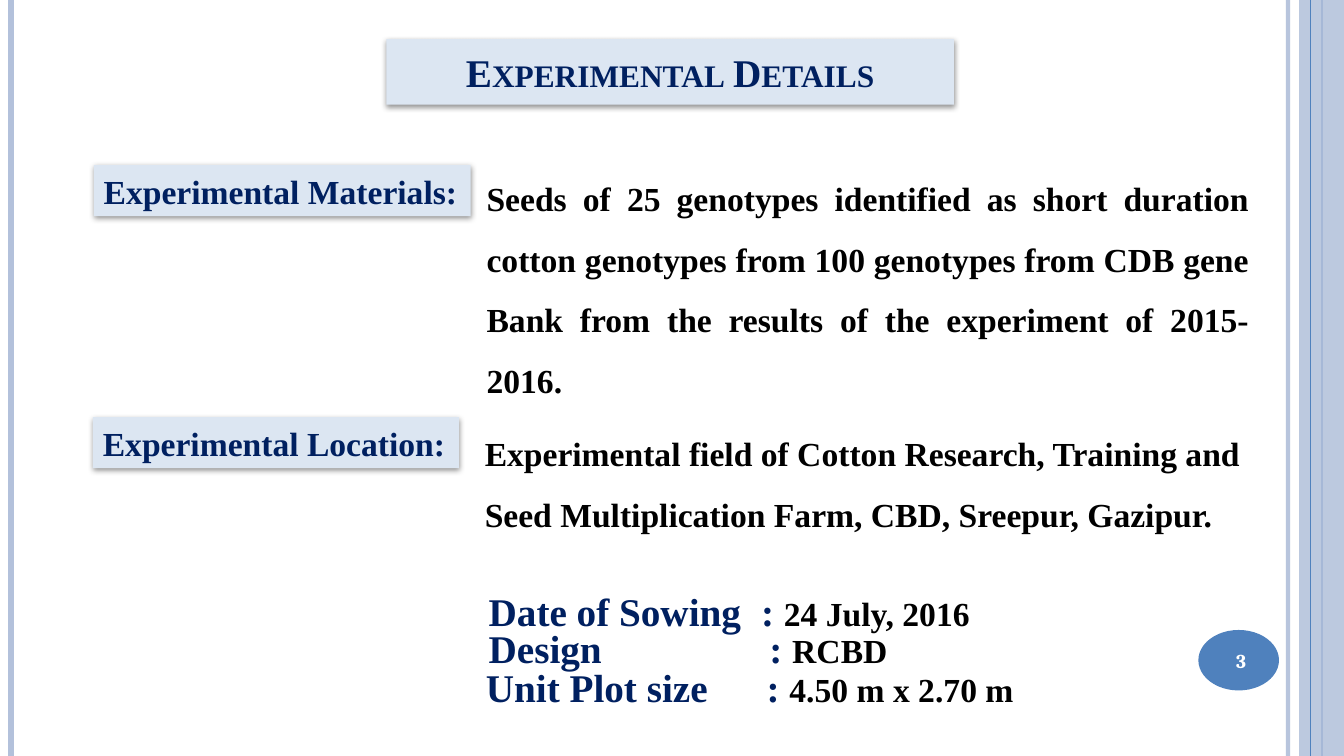
import lxml.etree
import pptx
import pptx.dml.color
import pptx.enum.shapes
import pptx.enum.text
import pptx.oxml.ns
import pptx.util

Pt = pptx.util.Pt
RGBColor = pptx.dml.color.RGBColor
Shape = pptx.enum.shapes.MSO_SHAPE
Anchor = pptx.enum.text.MSO_ANCHOR
Align = pptx.enum.text.PP_ALIGN
qn = pptx.oxml.ns.qn

NAVY = RGBColor(0x00, 0x20, 0x60)
BLACK = RGBColor(0x00, 0x00, 0x00)
WHITE = RGBColor(0xFF, 0xFF, 0xFF)
BLUE = RGBColor(0x4F, 0x81, 0xBD)
MIST = RGBColor(0xB3, 0xC1, 0xDB)
PALE = RGBColor(0xDC, 0xE6, 0xF2)

WIDTH, HEIGHT = 960, 540


def set_alpha(element, percent):
    """Make the solid colour inside a fill or line partly transparent."""
    color = next(element.iter(qn("a:srgbClr")))
    lxml.etree.SubElement(color, qn("a:alpha"), val=str(percent * 1000))


class Page:
    """One slide with its serif style."""

    serif = "Times New Roman"
    heading_size = 28
    body_size = 24

    def __init__(self, deck):
        self.shapes = deck.slides.add_slide(deck.slide_layouts[6]).shapes

    def rule(self, x, color, width, alpha=100):
        """Draw a full-height vertical line."""
        line = self.shapes.add_connector(
            pptx.enum.shapes.MSO_CONNECTOR.STRAIGHT, Pt(x), Pt(0), Pt(x), Pt(HEIGHT))
        line.line.color.rgb = color
        line.line.width = Pt(width)
        properties = line._element.spPr
        if alpha < 100:
            set_alpha(properties, alpha)
        lxml.etree.SubElement(properties, qn("a:effectLst"))

    def panel(self, kind, left, top, width, height, color, alpha=100):
        shape = self.shapes.add_shape(kind, Pt(left), Pt(top), Pt(width), Pt(height))
        shape.shadow.inherit = False
        shape.fill.solid()
        shape.fill.fore_color.rgb = color
        shape.line.fill.background()
        if alpha < 100:
            set_alpha(shape._element.spPr, alpha)
        return shape

    def label(self, text, left, top, width, height, size=body_size, align=Align.LEFT):
        """Add a pale heading box with a soft shadow below it."""
        box = self.panel(Shape.RECTANGLE, left, top, width, height, PALE)
        effects = box._element.spPr.find(qn("a:effectLst"))
        shadow = lxml.etree.SubElement(
            effects, qn("a:outerShdw"), blurRad=str(Pt(4)), dist=str(Pt(1.6)),
            dir="5400000", rotWithShape="0")
        color = lxml.etree.SubElement(shadow, qn("a:srgbClr"), val=str(BLACK))
        lxml.etree.SubElement(color, qn("a:alpha"), val="42000")
        box.text_frame.word_wrap = False
        box.text_frame.vertical_anchor = Anchor.MIDDLE
        return self.set_text(box, text, size, NAVY, align)

    def text(self, text, left, top, width, height, size=body_size, color=BLACK,
             align=Align.LEFT, anchor=Anchor.TOP, spacing=1.5, family=serif):
        box = self.shapes.add_textbox(Pt(left), Pt(top), Pt(width), Pt(height))
        box.text_frame.word_wrap = True
        box.text_frame.vertical_anchor = anchor
        para = self.set_text(box, text, size, color, align, family)
        para.line_spacing = spacing
        return para

    def set_text(self, box, text, size, color, align, family=serif):
        para = box.text_frame.paragraphs[0]
        para.text = text
        para.alignment = align
        para.font.name = family
        para.font.size = Pt(size)
        para.font.bold = True
        para.font.color.rgb = color
        return para

    def fact(self, name, value, left, top, colon):
        """Add a name and value, with the colon at a tab stop."""
        para = self.text("", left, top, 500, 58.5)
        stops = lxml.etree.Element(qn("a:tabLst"))
        lxml.etree.SubElement(stops, qn("a:tab"), pos=str(Pt(colon)), algn="l")
        para._p.pPr.find(qn("a:defRPr")).addprevious(stops)
        for words, size, color in ((f"{name}\t: ", self.heading_size, NAVY),
                                   (value, self.body_size, BLACK)):
            span = para.add_run()
            span.text = words
            span.font.size = Pt(size)
            span.font.color.rgb = color


def main():
    deck = pptx.Presentation()
    deck.slide_width, deck.slide_height = Pt(WIDTH), Pt(HEIGHT)
    page = Page(deck)

    page.rule(920, MIST, 3, alpha=93)
    page.rule(8, MIST, 4.5)
    page.rule(944, BLUE, 1.5)
    page.panel(Shape.RECTANGLE, 928, 0, 32, HEIGHT, MIST, alpha=87)
    page.rule(936, BLUE, 0.75)
    page.panel(Shape.OVAL, 856, 450, 57.6, 43.2, BLUE)
    page.text("3", 854.6, 451.4, 64, 41, size=14, color=WHITE, align=Align.CENTER,
              anchor=Anchor.MIDDLE, spacing=1, family="Cambria")

    title = page.label("Experimental Details", 276, 28, 405.4, 46.8,
                       size=page.heading_size, align=Align.CENTER)
    title.font._rPr.set("cap", "small")

    page.label("Experimental Materials:", 67, 118, 269.3, 36.3)
    page.text("Seeds of 25 genotypes identified as short duration cotton genotypes "
              "from 100 genotypes from CDB gene Bank from the results of the "
              "experiment of 2015-2016.",
              340.5, 111, 558.7, 176.4, align=Align.JUSTIFY, anchor=Anchor.MIDDLE)

    page.label("Experimental Location:", 66.4, 298, 261.4, 36.3)
    page.text("Experimental field of Cotton Research, Training and Seed "
              "Multiplication Farm, CBD, Sreepur, Gazipur.",
              339.2, 291.6, 569.5, 94.3)

    page.fact("Date of Sowing", "24 July, 2016", 342, 399, 194.5)
    page.fact("Design", "RCBD", 342, 425.5, 200.5)
    page.fact("Unit Plot size", "4.50 m x 2.70 m", 340, 453.5, 200.5)

    deck.save("out.pptx")


if __name__ == "__main__":
    main()
